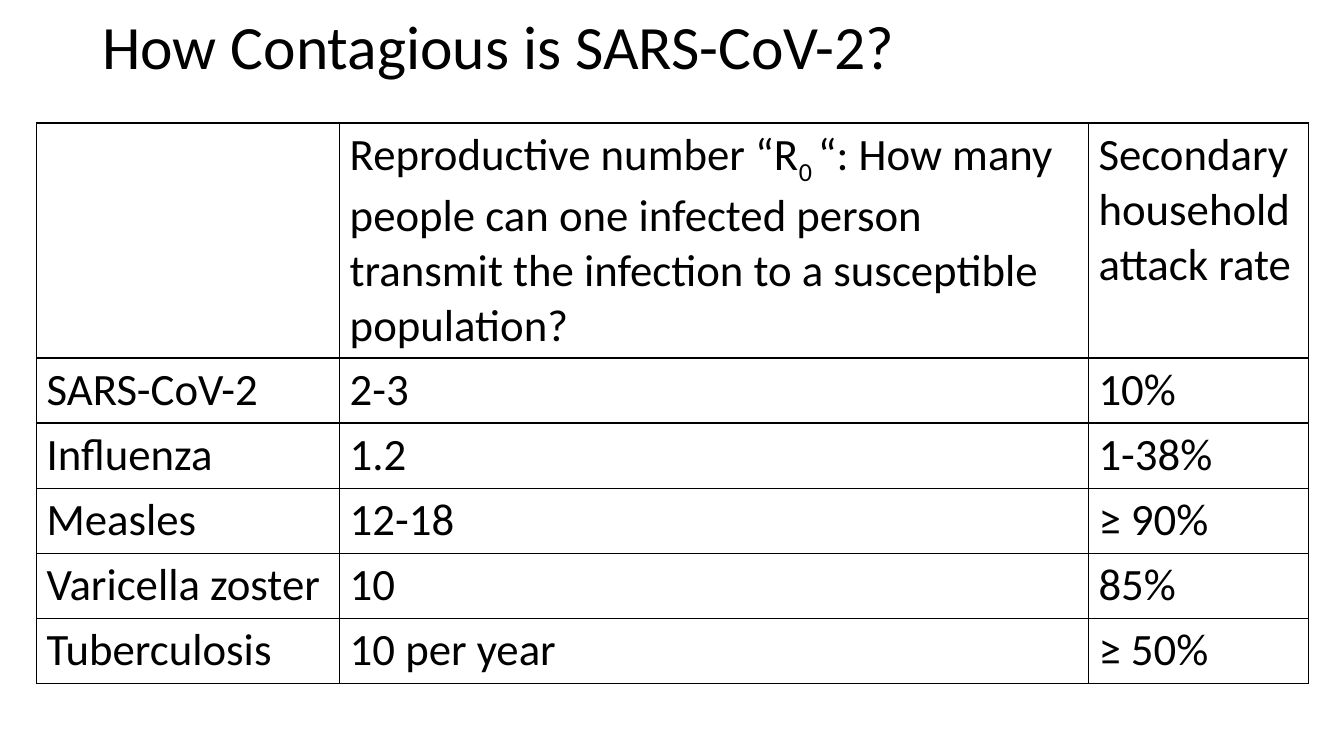
from lxml import etree
from pptx import Presentation
from pptx.dml.color import RGBColor
from pptx.enum.text import MSO_ANCHOR
from pptx.oxml.ns import qn
from pptx.util import Cm, Pt

MIDDLE = MSO_ANCHOR.MIDDLE

TITLE = "How Contagious is SARS-CoV-2?"
SUBSCRIPT = "0 "
HEADER = [
    "",
    "Reproductive number “R0 “: How many people can one infected person "
    "transmit the infection to a susceptible population?",
    "Secondary household attack rate",
]
DISEASES = [
    ("SARS-CoV-2", "2-3", "10%"),
    ("Influenza", "1.2", "1-38%"),
    ("Measles", "12-18", "≥ 90%"),
    ("Varicella zoster", "10", "85%"),
    ("Tuberculosis", "10 per year", "≥ 50%"),
]

FONT = "Calibri"
COLORS = {"text": "000000", "border": "000000", "cell": "FFFFFF"}
TITLE_SIZE, TABLE_SIZE = 44, 32
COL_WIDTHS = [7.64, 18.87, 5.54]
HEADER_HEIGHT, ROW_HEIGHT = 5.92, 1.64
TABLE_LEFT, TABLE_TOP = 0.92, 3.1


def add_run(p, text, size):
    r = p.add_run()
    r.text = text
    r.font.name = FONT
    r.font.size = Pt(size)
    r.font.color.rgb = RGBColor.from_string(COLORS["text"])
    return r


def add_borders(cell):
    tc_pr = cell._tc.get_or_add_tcPr()
    for i, side in enumerate(("lnL", "lnR", "lnT", "lnB")):
        ln = etree.Element(qn(f"a:{side}"), w=str(Pt(1)))
        fill = etree.SubElement(ln, qn("a:solidFill"))
        etree.SubElement(fill, qn("a:srgbClr"), val=COLORS["border"])
        tc_pr.insert(i, ln)


def fill_cell(cell, text):
    """Write the cell's text, lowering the subscript where it occurs."""
    p = cell.text_frame.paragraphs[0]
    before, mark, after = text.partition("R" + SUBSCRIPT)
    if mark:
        add_run(p, before + "R", TABLE_SIZE)
        sub = add_run(p, SUBSCRIPT, TABLE_SIZE)
        sub.font._element.set("baseline", "-25000")
        add_run(p, after, TABLE_SIZE)
    elif text:
        add_run(p, text, TABLE_SIZE)
    cell.fill.solid()
    cell.fill.fore_color.rgb = RGBColor.from_string(COLORS["cell"])
    add_borders(cell)


def add_title(s):
    tf = s.shapes.add_textbox(Cm(2.33), Cm(0.25), Cm(29.21), Cm(1.98)).text_frame
    tf.word_wrap = True
    tf.vertical_anchor = MIDDLE
    p = tf.paragraphs[0]
    p.line_spacing = 0.9
    add_run(p, TITLE, TITLE_SIZE)


def add_disease_table(s):
    rows = [HEADER, *DISEASES]
    heights = [HEADER_HEIGHT] + [ROW_HEIGHT] * len(DISEASES)
    table = s.shapes.add_table(
        len(rows), len(COL_WIDTHS), Cm(TABLE_LEFT), Cm(TABLE_TOP),
        Cm(sum(COL_WIDTHS)), Cm(sum(heights))).table
    table.first_row = False
    table.horz_banding = False
    for column, width in zip(table.columns, COL_WIDTHS):
        column.width = Cm(width)
    for row, height, texts in zip(table.rows, heights, rows):
        row.height = Cm(height)
        for cell, text in zip(row.cells, texts):
            fill_cell(cell, text)


def main():
    prs = Presentation()
    prs.slide_width, prs.slide_height = Cm(33.87), Cm(19.05)
    s = prs.slides.add_slide(prs.slide_layouts[6])
    add_title(s)
    add_disease_table(s)
    prs.save("out.pptx")


if __name__ == "__main__":
    main()
